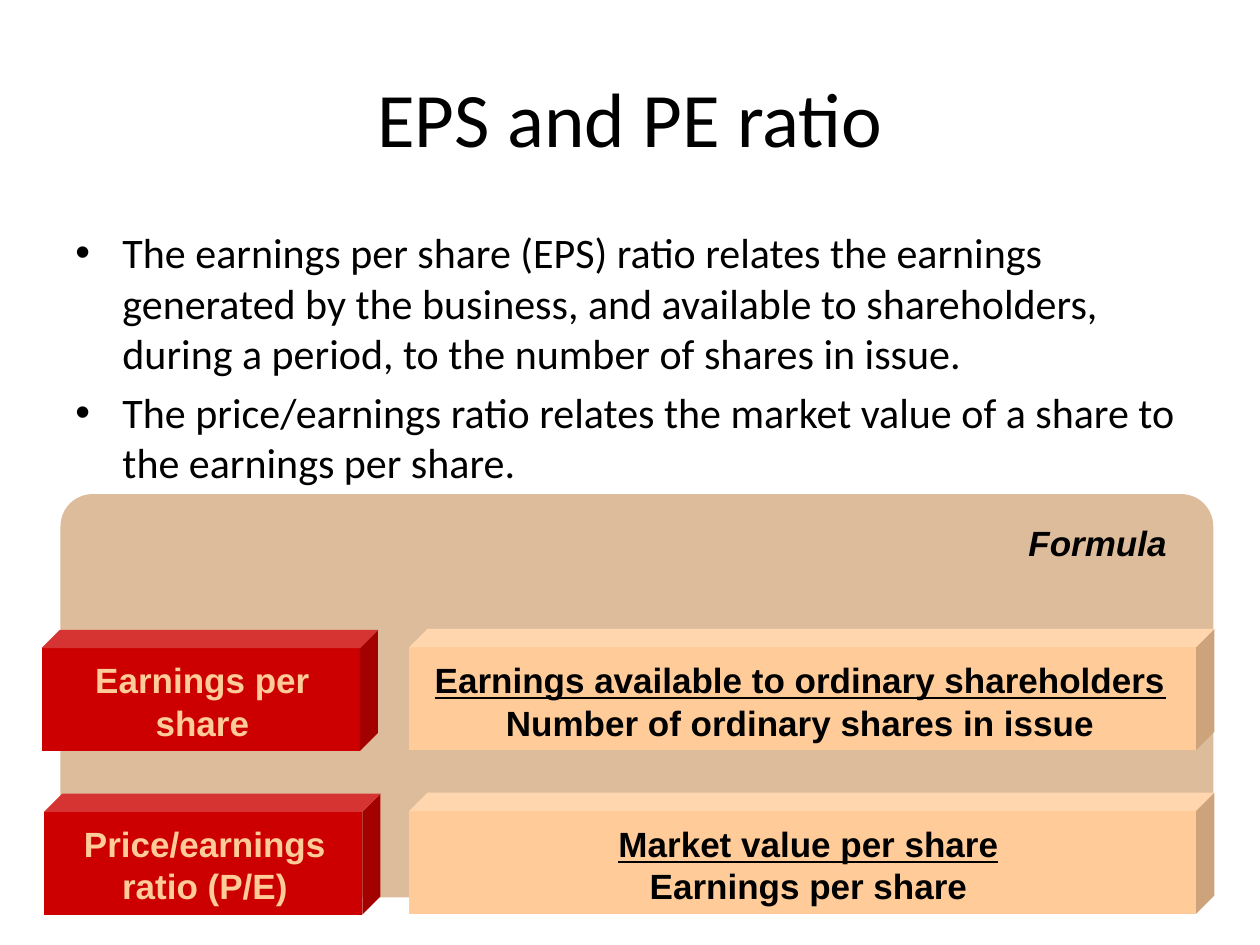
from lxml import etree
from pptx import Presentation
from pptx.dml.color import RGBColor
from pptx.enum.shapes import MSO_SHAPE as Preset
from pptx.enum.text import MSO_ANCHOR as Anchor, PP_ALIGN as Align
from pptx.oxml.ns import qn
from pptx.util import Cm, Pt


def add_block(preset, bounds, color, adjustment):
    shape = slide.shapes.add_shape(preset, *map(Cm, bounds))
    shape.shadow.inherit = False
    shape.adjustments[0] = adjustment
    shape.fill.solid()
    shape.fill.fore_color.rgb = RGBColor.from_string(color)
    shape.line.fill.background()


def add_text(bounds, paragraphs, color, font_format, align=Align.CENTER, anchor=Anchor.TOP):
    frame = slide.shapes.add_textbox(*map(Cm, bounds)).text_frame
    frame.word_wrap = True
    frame.vertical_anchor = anchor
    for index, lines in enumerate(paragraphs):
        paragraph = frame.add_paragraph() if index else frame.paragraphs[0]
        paragraph.alignment = align
        for number, (text, underline) in enumerate(lines):
            if number:
                paragraph.add_line_break()
            run = paragraph.add_run()
            run.text = text
            run.font.color.rgb = RGBColor.from_string(color)
            for name, value in {**font_format, "underline": underline}.items():
                setattr(run.font, name, value)
    return frame


presentation = Presentation()
presentation.slide_width = Cm(25.4)
presentation.slide_height = Cm(19.05)
slide = presentation.slides.add_slide(presentation.slide_layouts[6])

title_format = {"name": "Calibri", "size": Pt(44)}
body_format = {"name": "Calibri", "size": Pt(24)}
label_format = {"name": "Arial", "size": Pt(20), "bold": True}

add_text((1.27, 0.76, 22.86, 3.18), [[("EPS and PE ratio", False)]],
         "000000", title_format, anchor=Anchor.MIDDLE)

points = [
    "The earnings per share (EPS) ratio relates the earnings generated by the business, "
    "and available to shareholders, during a period, to the number of shares in issue.",
    "The price/earnings ratio relates the market value of a share to the earnings per share.",
]
body = add_text((1.27, 4.45, 22.86, 12.57), [[(point, False)] for point in points],
                "000000", body_format, align=Align.LEFT)
for paragraph in body.paragraphs:
    paragraph.space_before = Pt(4.8)
    properties = paragraph._p.get_or_add_pPr()
    properties.set("marL", str(Cm(0.95)))
    properties.set("indent", str(Cm(-0.95)))
    etree.SubElement(properties, qn("a:buFont"), typeface="Arial")
    etree.SubElement(properties, qn("a:buChar"), char="•")

add_block(Preset.ROUNDED_RECTANGLE, (1.22, 9.96, 23.24, 8.13), "DDBC9B", 0.08)
add_text((18.39, 10.39, 5.38, 1.04), [[("Formula", False)]], "000000",
         {**label_format, "italic": True}, align=Align.RIGHT)

ratios = [
    (0.84, 12.7, 7.94, "Earnings per share",
     "Earnings available to ordinary shareholders", "Number of ordinary shares in issue"),
    (0.89, 16, 8.11, "Price/earnings ratio (P/E)",
     "Market value per share", "Earnings per share"),
]
for left, top, formula_left, label, numerator, denominator in ratios:
    add_block(Preset.CUBE, (left, top, 6.78, 2.44), "CC0000", 0.15)
    add_text((left + 0.05, top + 0.46, 6.38, 1.85), [[(label, False)]], "FFCC99", label_format)
    add_block(Preset.CUBE, (8.25, top - 0.02, 16.23, 2.44), "FFCC99", 0.15)
    add_text((formula_left, top + 0.46, 16.38, 1.85),
             [[(numerator, True), (denominator, False)]], "000000", label_format)

presentation.save("out.pptx")
